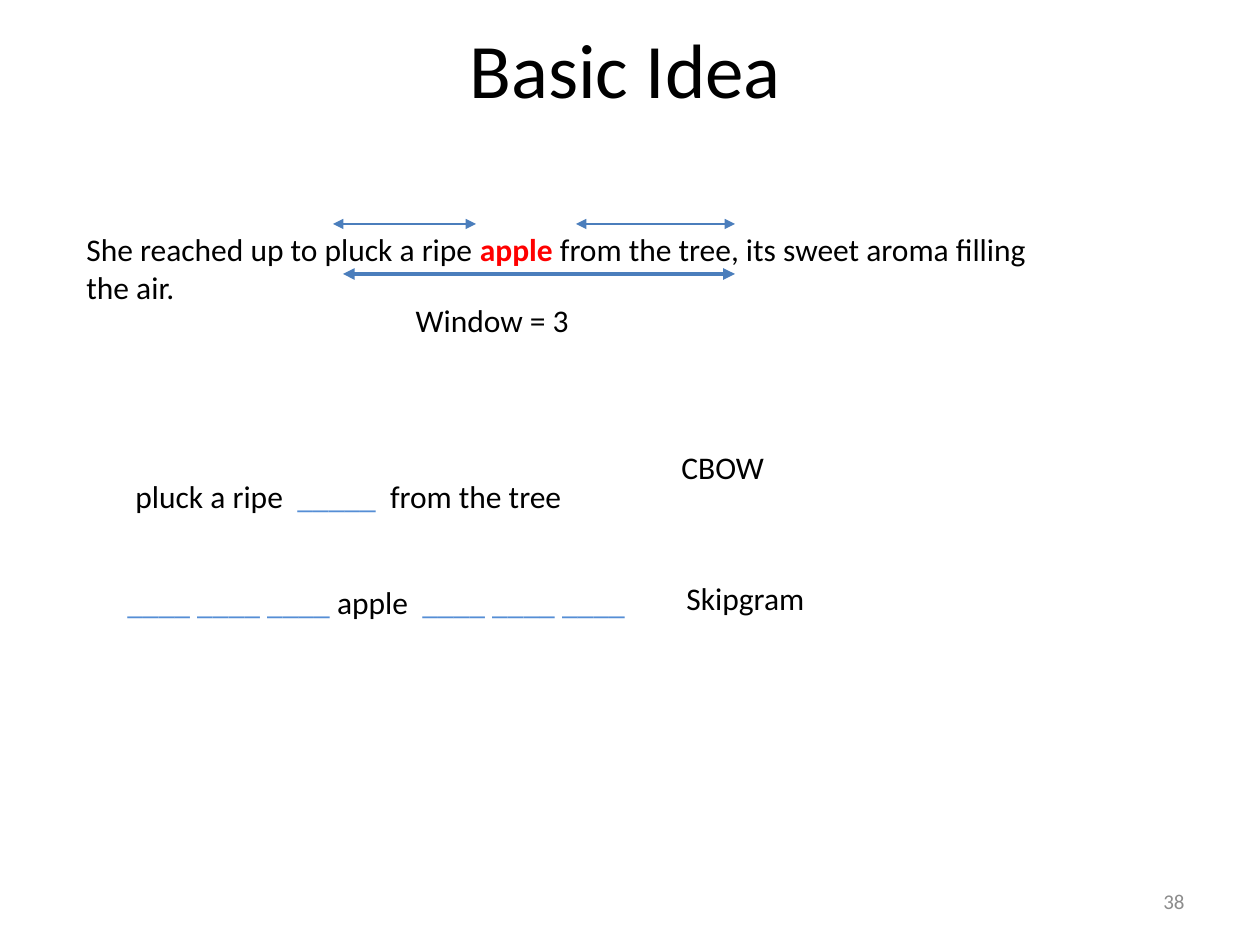
from lxml import etree
from pptx import Presentation
from pptx.dml.color import RGBColor
from pptx.enum.shapes import MSO_CONNECTOR
from pptx.enum.text import MSO_ANCHOR, PP_ALIGN
from pptx.oxml.ns import qn
from pptx.util import Emu, Pt

STRAIGHT = MSO_CONNECTOR.STRAIGHT
TOP, MIDDLE = MSO_ANCHOR.TOP, MSO_ANCHOR.MIDDLE
LEFT, CENTER, RIGHT = PP_ALIGN.LEFT, PP_ALIGN.CENTER, PP_ALIGN.RIGHT
FONT = "Calibri"
COLORS = {
    "text": "000000",
    "target": "FF0000",
    "blank": "558ED5",
    "arrow": "4B7EBC",
    "number": "8C8C8C",
}


def px(length):
    return Emu(round(length * 914400 / 126))


def color(name):
    return RGBColor.from_string(COLORS[name])


def add_text(slide, box, parts, size=18, align=LEFT, anchor=TOP, indent=0):
    shape = slide.shapes.add_textbox(*map(px, box))
    text_frame = shape.text_frame
    text_frame.word_wrap = True
    text_frame.vertical_anchor = anchor
    text_frame.margin_left += px(indent)
    paragraph = text_frame.paragraphs[0]
    paragraph.alignment = align
    for text, color_name in parts:
        run = paragraph.add_run()
        run.text = text
        run.font.name = FONT
        run.font.size = Pt(size)
        run.font.bold = color_name == "target"
        run.font.color.rgb = color(color_name)


def add_double_arrow(slide, left, right, y, weight):
    connector = slide.shapes.add_connector(STRAIGHT, px(left), px(y), px(right), px(y))
    connector.line.color.rgb = color("arrow")
    connector.line.width = Pt(weight)
    line = connector.line._get_or_add_ln()
    for end in ("a:headEnd", "a:tailEnd"):
        etree.SubElement(line, qn(end), type="triangle")
    etree.SubElement(connector._element.spPr, qn("a:effectLst"))


def add_title(slide, box):
    add_text(slide, box, [("Basic Idea", "text")], size=44, align=CENTER)


def add_window_sentence(slide, box):
    left, top, width, height = box
    sentence = [
        ("She reached up to pluck a ripe ", "text"),
        ("apple", "target"),
        (" from the tree, its sweet aroma filling the air.", "text"),
    ]
    add_text(slide, box, sentence)
    add_text(slide, (left + 203, top + 71, 446, 50), [("Window = 3", "text")], indent=126)
    for start, end, y, weight in ((502, 661, 0, 0.75), (259, 402, 0, 0.75), (269, 661, 50, 2.25)):
        add_double_arrow(slide, left + start, left + end, top + y, weight)


def add_model(slide, box, parts, name, name_left, name_top):
    left, top, width, height = box
    add_text(slide, box, parts)
    add_text(slide, (left + name_left, top + name_top, 218, 50), [(name, "text")])


def add_slide_number(slide, box):
    add_text(slide, box, [("38", "number")], size=12, align=RIGHT, anchor=MIDDLE)


def main():
    presentation = Presentation()
    presentation.slide_width = px(1260)
    presentation.slide_height = px(945)
    slide = presentation.slides.add_slide(presentation.slide_layouts[6])

    add_title(slide, (74, 15, 1103, 118))
    add_window_sentence(slide, (74, 224, 1002, 89))
    cbow = [("pluck a ripe  ", "text"), ("_____  ", "blank"), ("from the tree", "text")]
    add_model(slide, (123, 471, 1062, 89), cbow, "CBOW", 546, -29)
    skipgram = [("____ ____ ____ ", "blank"), ("apple  ", "text"), ("____ ____ ____", "blank")]
    add_model(slide, (115, 577, 1062, 89), skipgram, "Skipgram", 559, -4)
    add_slide_number(slide, (903, 876, 294, 50))

    presentation.save("out.pptx")


if __name__ == "__main__":
    main()
